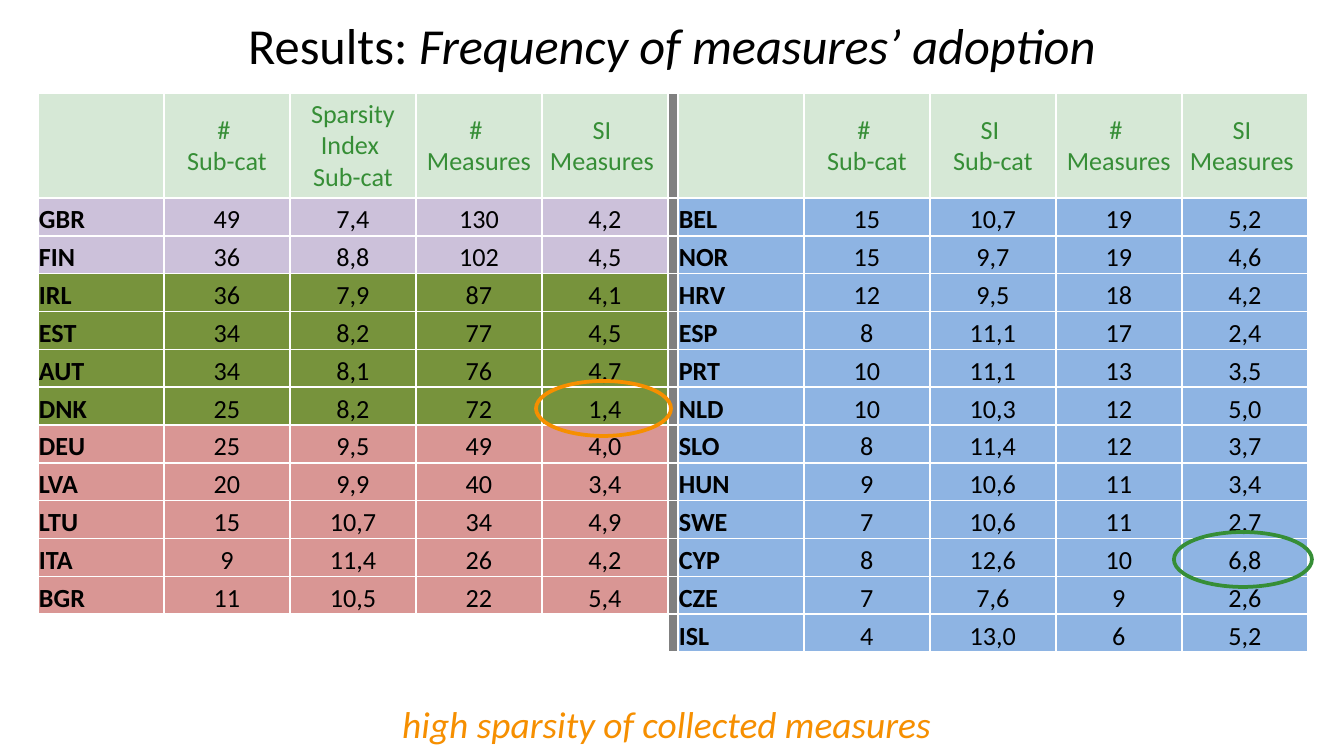
"""Build the slide on how often measures are adopted, country by country."""
from lxml.etree import SubElement
from pptx import Presentation
from pptx.dml.color import RGBColor
from pptx.enum.shapes import MSO_SHAPE as Kind
from pptx.enum.text import MSO_ANCHOR as Anchor, MSO_AUTO_SIZE as Auto, PP_ALIGN as Align
from pptx.oxml.ns import qn
from pptx.util import Emu, Pt

SCALE = 914400 / 134.4
BLACK, WHITE, GRAY = "000000", "FFFFFF", "808080"
GREEN, ORANGE = "368E36", "F68F00"
PURPLE, OLIVE, PINK, BLUE = "CCC1DA", "77933C", "D99694", "8EB4E3"

TITLE = [("Results: ", False), ("Frequency of measures’ adoption", True)]
CLAIM = "high sparsity of collected measures "
HEADS = [
    ["", "# \nSub-cat", "Sparsity Index \nSub-cat", "# \nMeasures", "SI \nMeasures "],
    ["", "# \nSub-cat", "SI \nSub-cat", "# \nMeasures", "SI \nMeasures "],
]
LEFT = [
    ("GBR", "49", "7,4", "130", "4,2"),
    ("FIN", "36", "8,8", "102", "4,5"),
    ("IRL", "36", "7,9", "87", "4,1"),
    ("EST", "34", "8,2", "77", "4,5"),
    ("AUT", "34", "8,1", "76", "4,7"),
    ("DNK", "25", "8,2", "72", "1,4"),
    ("DEU", "25", "9,5", "49", "4,0"),
    ("LVA", "20", "9,9", "40", "3,4"),
    ("LTU", "15", "10,7", "34", "4,9"),
    ("ITA", "9", "11,4", "26", "4,2"),
    ("BGR", "11", "10,5", "22", "5,4"),
    ("",) * 5,
]
RIGHT = [
    ("BEL", "15", "10,7", "19", "5,2"),
    ("NOR", "15", "9,7", "19", "4,6"),
    ("HRV", "12", "9,5", "18", "4,2"),
    ("ESP", "8", "11,1", "17", "2,4"),
    ("PRT", "10", "11,1", "13", "3,5"),
    ("NLD", "10", "10,3", "12", "5,0"),
    ("SLO", "8", "11,4", "12", "3,7"),
    ("HUN", "9", "10,6", "11", "3,4"),
    ("SWE", "7", "10,6", "11", "2,7"),
    ("CYP", "8", "12,6", "10", "6,8"),
    ("CZE", "7", "7,6", "9", "2,6"),
    ("ISL", "4", "13,0", "6", "5,2"),
]
BANDS = [PURPLE] * 2 + [OLIVE] * 4 + [PINK] * 5 + [WHITE]
RINGS = [(GREEN, (1174, 532, 138, 55)), (ORANGE, (536, 381, 135, 55))]
GAP = 5
WIDTHS = [126] * GAP + [10] + [126] * 5
HEIGHTS = [105] + [454 / len(LEFT)] * len(LEFT)


def px(num):
    return Emu(round(num * SCALE))


def color(code):
    return RGBColor.from_string(code)


def style(thing, **vals):
    for name, val in vals.items():
        setattr(thing, name, val)


def write(para, text, size, code, bold=False, italic=False):
    run = para.add_run()
    run.text = text
    style(run.font, name="Calibri", size=Pt(size), bold=bold, italic=italic)
    run.font.color.rgb = color(code)


def edge(cell):
    props = cell._tc.get_or_add_tcPr()
    for spot, side in enumerate(("lnL", "lnR", "lnT", "lnB")):
        line = SubElement(props, qn(f"a:{side}"), w=str(Pt(1)))
        SubElement(SubElement(line, qn("a:solidFill")), qn("a:srgbClr"), val=WHITE)
        props.insert(spot, line)


def fill_cell(cell, text, row, col):
    head = row == 0
    back = GRAY if col == GAP else GREEN if head else BANDS[row - 1] if col < GAP else BLUE
    cell.fill.solid()
    cell.fill.fore_color.rgb = color(back)
    if back == GREEN:
        tint = next(cell._tc.get_or_add_tcPr().iter(qn("a:srgbClr")))
        SubElement(tint, qn("a:alpha"), val="20000")
    edge(cell)
    style(cell, margin_left=px(1), margin_right=px(1), margin_top=px(1), margin_bottom=0,
          vertical_anchor=Anchor.MIDDLE if head else Anchor.BOTTOM)
    name = col in (0, GAP + 1)
    frame = cell.text_frame
    for spot, part in enumerate(text.split("\n")):
        para = frame.add_paragraph() if spot else frame.paragraphs[0]
        para.alignment = Align.LEFT if name else Align.CENTER
        if part:
            write(para, part, 14, GREEN if head else BLACK, bold=name)
        else:
            SubElement(para._p, qn("a:endParaRPr"), sz="1400")


def add_title(slide):
    title = slide.shapes.title
    style(title, left=px(37), top=px(12), width=px(1270), height=px(65))
    frame = title.text_frame
    style(frame, auto_size=Auto.NONE, word_wrap=True, vertical_anchor=Anchor.MIDDLE,
          margin_left=px(9), margin_right=px(9), margin_top=px(5), margin_bottom=px(5))
    para = frame.paragraphs[0]
    para.alignment = Align.CENTER
    for text, italic in TITLE:
        write(para, text, 27, BLACK, italic=italic)


def add_claim(slide):
    box = slide.shapes.add_shape(Kind.RECTANGLE, *map(px, (7, 695, 1328, 59)))
    box.shadow.inherit = False
    box.fill.solid()
    box.fill.fore_color.rgb = color(WHITE)
    box.line.fill.background()
    style(box.text_frame, word_wrap=True, auto_size=Auto.SHAPE_TO_FIT_TEXT,
          vertical_anchor=Anchor.TOP)
    para = box.text_frame.paragraphs[0]
    para.alignment = Align.CENTER
    write(para, CLAIM, 20, ORANGE, italic=True)


def add_grid(slide):
    rows = [[*one, "", *two] for one, two in zip([HEADS[0], *LEFT], [HEADS[1], *RIGHT])]
    place = map(px, (38, 93, sum(WIDTHS), sum(HEIGHTS)))
    grid = slide.shapes.add_table(len(rows), len(WIDTHS), *place).table
    for col, wide in zip(grid.columns, WIDTHS):
        col.width = px(wide)
    for row, high in zip(grid.rows, HEIGHTS):
        row.height = px(high)
    for r, row in enumerate(rows):
        for c, text in enumerate(row):
            fill_cell(grid.cell(r, c), text, r, c)


def add_rings(slide):
    for code, place in RINGS:
        ring = slide.shapes.add_shape(Kind.OVAL, *map(px, place))
        ring.shadow.inherit = False
        ring.fill.background()
        ring.line.color.rgb = color(code)
        ring.line.width = Pt(2)


def main():
    deck = Presentation()
    style(deck, slide_width=px(1344), slide_height=px(756))
    slide = deck.slides.add_slide(deck.slide_layouts[5])
    for add in (add_title, add_claim, add_grid, add_rings):
        add(slide)
    deck.save("out.pptx")


if __name__ == "__main__":
    main()
